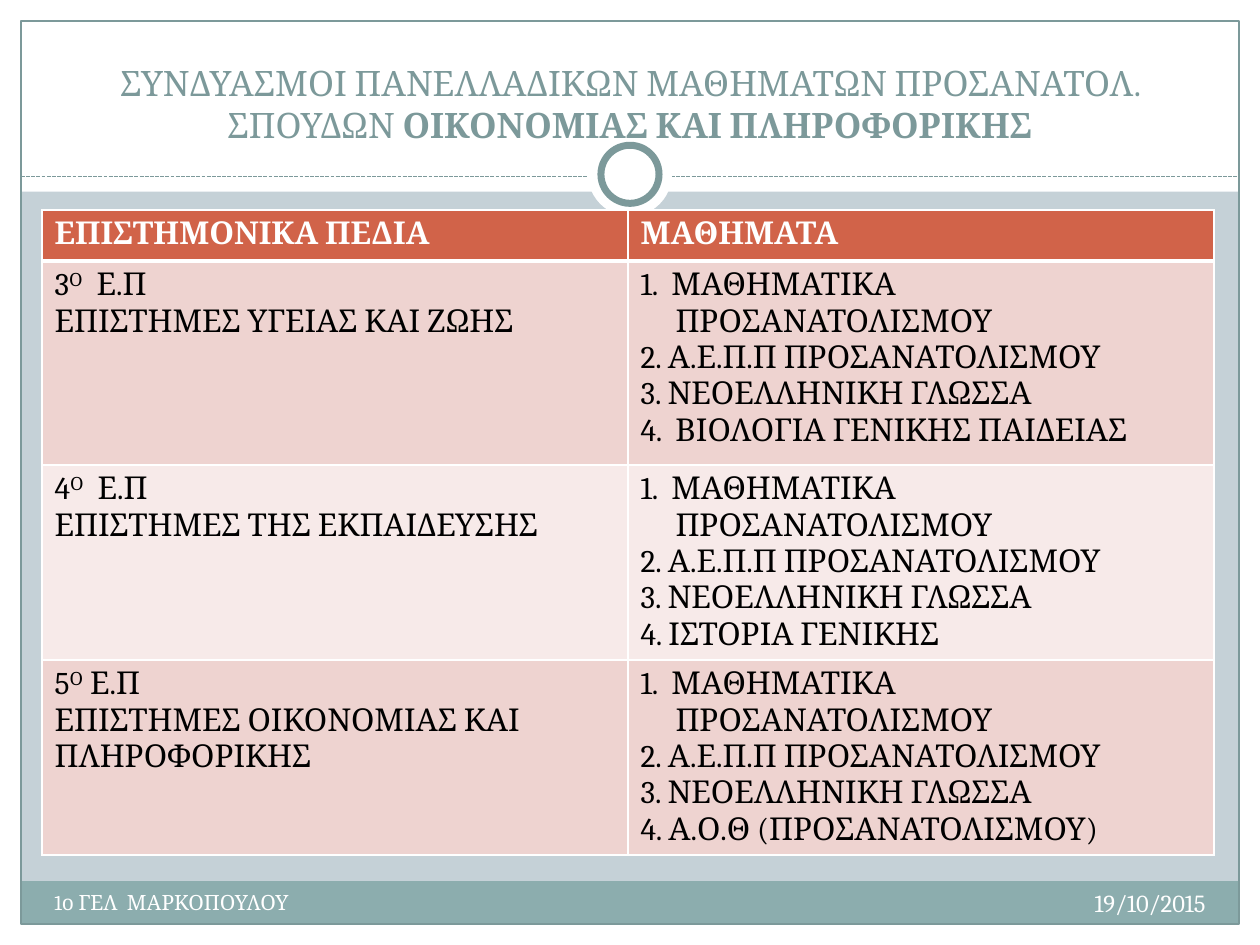
"""Build the slide of exam subject combinations for economics and informatics studies."""
from lxml import etree
from pptx import Presentation
from pptx.dml.color import RGBColor
from pptx.enum.dml import MSO_LINE
from pptx.enum.shapes import MSO_CONNECTOR, MSO_SHAPE
from pptx.enum.text import MSO_ANCHOR, PP_ALIGN
from pptx.oxml.ns import qn
from pptx.util import Pt

RECT, OVAL = MSO_SHAPE.RECTANGLE, MSO_SHAPE.OVAL
LEFT, CENTER, RIGHT = PP_ALIGN.LEFT, PP_ALIGN.CENTER, PP_ALIGN.RIGHT
DASH, STRAIGHT = MSO_LINE.SQUARE_DOT, MSO_CONNECTOR.STRAIGHT
BOTTOM = MSO_ANCHOR.BOTTOM
COLORS = {
    "back": "C5D1D7", "white": "FFFFFF", "bar": "8CADAE", "teal": "7C999A",
    "header": "D16349", "odd": "EED3D0", "even": "F7EAE9", "black": "000000",
}
RGB = {name: RGBColor.from_string(value) for name, value in COLORS.items()}


def add_run(p, text, size, color, bold=False, raised=False):
    r = p.add_run()
    r.text = text
    for key, value in {"name": "Cambria", "size": Pt(size), "bold": bold}.items():
        setattr(r.font, key, value)
    r.font.color.rgb = RGB[color]
    if raised:
        r._r.get_or_add_rPr().set("baseline", "30000")


def add_border(cell, bottom):
    tc_pr = cell._tc.get_or_add_tcPr()
    for side, width in {"lnL": 1, "lnR": 1, "lnT": 1, "lnB": bottom}.items():
        ln = etree.SubElement(tc_pr, qn(f"a:{side}"), w=str(Pt(width)))
        fill = etree.SubElement(ln, qn("a:solidFill"))
        etree.SubElement(fill, qn("a:srgbClr"), val=COLORS["white"])


prs = Presentation()
prs.slide_width, prs.slide_height = Pt(720), Pt(540)
s = prs.slides.add_slide(prs.slide_layouts[5])
s.background.fill.solid()
s.background.fill.fore_color.rgb = RGB["back"]

panels = [
    (0, 528, 720, 12, "white"),
    (0, 0, 720, 109.5, "white"),
    (0, 0, 12, 540, "white"),
    (708, 0, 12, 540, "white"),
    (12, 503.5, 696, 24.5, "bar"),
]
frame = [(RECT, (12, 12, 696, 516), None, 0.75)]
circles = [
    (OVAL, (336, 75.6, 48, 48), "white", 0),
    (OVAL, (343.4, 83, 33.2, 33.2), "white", 4),
]
backdrop = [(RECT, panel[:4], panel[4], 0) for panel in panels] + frame
line = s.shapes.add_connector(STRAIGHT, Pt(12), Pt(101), Pt(708), Pt(101))
line.line.color.rgb, line.line.width, line.line.dash_style = RGB["teal"], Pt(0.75), DASH
etree.SubElement(line._element.spPr, qn("a:effectLst"))

for kind, box, color, width in backdrop + circles:
    sp = s.shapes.add_shape(kind, *map(Pt, box))
    sp.shadow.inherit = False
    if color:
        sp.fill.solid()
        sp.fill.fore_color.rgb = RGB[color]
    else:
        sp.fill.background()
    if width:
        sp.line.color.rgb, sp.line.width = RGB["teal"], Pt(width)
    else:
        sp.line.fill.background()
    if kind == RECT:
        line._element.addprevious(sp._element)

title = s.shapes.title
for key, value in {"left": 39.6, "top": 21, "width": 640.8, "height": 66}.items():
    setattr(title, key, Pt(value))
title.text_frame.vertical_anchor = BOTTOM
p = title.text_frame.paragraphs[0]
p.alignment = CENTER
add_run(p, "ΣΥΝΔΥΑΣΜΟΙ ΠΑΝΕΛΛΑΔΙΚΩΝ ΜΑΘΗΜΑΤΩΝ ΠΡΟΣΑΝΑΤΟΛ. ΣΠΟΥΔΩΝ ", 20, "teal")
add_run(p, "ΟΙΚΟΝΟΜΙΑΣ ΚΑΙ ΠΛΗΡΟΦΟΡΙΚΗΣ", 20, "teal", bold=True)
s.shapes._spTree.append(title._element)

headers = ["ΕΠΙΣΤΗΜΟΝΙΚΑ ΠΕΔΙΑ", "ΜΑΘΗΜΑΤΑ"]
fields = [
    ("3", "  Ε.Π", "ΕΠΙΣΤΗΜΕΣ ΥΓΕΙΑΣ ΚΑΙ ΖΩΗΣ", "4.  ΒΙΟΛΟΓΙΑ ΓΕΝΙΚΗΣ ΠΑΙΔΕΙΑΣ"),
    ("4", "  Ε.Π", "ΕΠΙΣΤΗΜΕΣ ΤΗΣ ΕΚΠΑΙΔΕΥΣΗΣ", "4. ΙΣΤΟΡΙΑ ΓΕΝΙΚΗΣ"),
    ("5", " Ε.Π", "ΕΠΙΣΤΗΜΕΣ ΟΙΚΟΝΟΜΙΑΣ ΚΑΙ ΠΛΗΡΟΦΟΡΙΚΗΣ", "4. Α.Ο.Θ (ΠΡΟΣΑΝΑΤΟΛΙΣΜΟΥ)"),
]
common = [
    "1.  ΜΑΘΗΜΑΤΙΚΑ", "ΠΡΟΣΑΝΑΤΟΛΙΣΜΟΥ",
    "2. Α.Ε.Π.Π ΠΡΟΣΑΝΑΤΟΛΙΣΜΟΥ", "3. ΝΕΟΕΛΛΗΝΙΚΗ ΓΛΩΣΣΑ",
]
heights = [29.2, 116.6, 111.4, 111.4]
table = s.shapes.add_table(4, 2, Pt(24), Pt(120), Pt(669.6), Pt(sum(heights))).table
for column in table.columns:
    column.width = Pt(334.8)
for i, height in enumerate(heights):
    table.rows[i].height = Pt(height)
    for cell in table.rows[i].cells:
        add_border(cell, 1 if i else 3)
        cell.fill.solid()
        cell.fill.fore_color.rgb = RGB[["even", "odd"][i % 2] if i else "header"]

for cell, text in zip(table.rows[0].cells, headers):
    add_run(cell.text_frame.paragraphs[0], text, 18, "white", bold=True)
for i, (number, suffix, field, last) in enumerate(fields, 1):
    tf = table.cell(i, 0).text_frame
    p = tf.paragraphs[0]
    add_run(p, number, 18, "black")
    add_run(p, "Ο", 18, "black", raised=True)
    add_run(p, suffix, 18, "black")
    add_run(tf.add_paragraph(), field, 18, "black")
    tf = table.cell(i, 1).text_frame
    for j, subject in enumerate(common + [last]):
        p = tf.add_paragraph() if j else tf.paragraphs[0]
        add_run(p, subject, 18, "black")
        if j == 1:
            p._p.get_or_add_pPr().set("marL", str(Pt(20)))

footers = [
    ("19/10/2015", (456, 504, 240, 28.8), 14, RIGHT),
    ("1ο ΓΕΛ  ΜΑΡΚΟΠΟΥΛΟΥ", (24, 504.6, 282, 28.8), 12, LEFT),
]
for text, box, size, align in footers:
    tf = s.shapes.add_textbox(*map(Pt, box)).text_frame
    tf.word_wrap = True
    p = tf.paragraphs[0]
    p.alignment = align
    add_run(p, text, size, "white")

prs.save("out.pptx")
